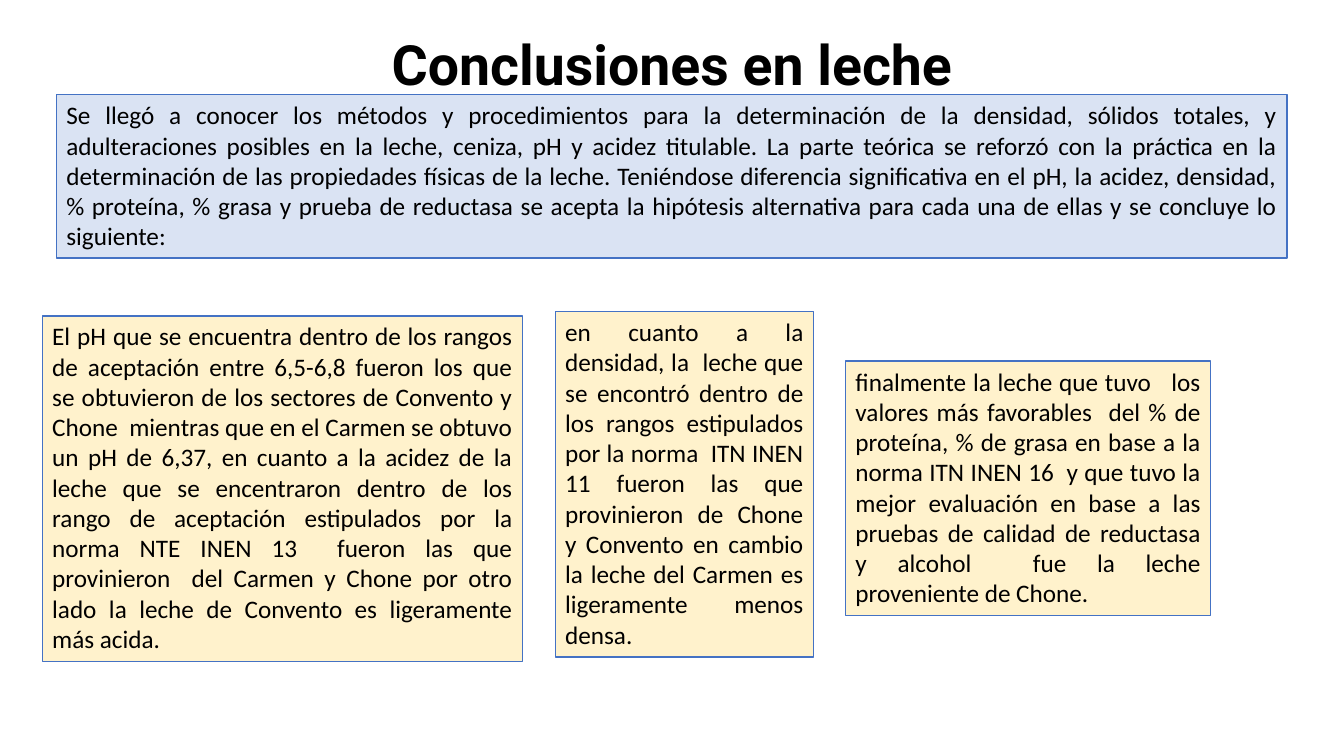
from pptx import Presentation
from pptx.dml import color
from pptx.enum import shapes, text
from pptx.util import Pt

INTRO = (
    "Se llegó a conocer los métodos y procedimientos para la determinación de la densidad, "
    "sólidos totales, y adulteraciones posibles en la leche, ceniza, pH y acidez titulable. "
    "La parte teórica se reforzó con la práctica en la determinación de las propiedades físicas "
    "de la leche. Teniéndose diferencia significativa en el pH, la acidez, densidad, % proteína, "
    "% grasa y prueba de reductasa se acepta la hipótesis alternativa para cada una de ellas y se "
    "concluye lo siguiente:"
)
ACIDITY = (
    "El pH que se encuentra dentro de los rangos de aceptación entre 6,5-6,8 fueron los que se "
    "obtuvieron de los sectores de Convento y Chone  mientras que en el Carmen se obtuvo un pH de "
    "6,37, en cuanto a la acidez de la leche que se encentraron dentro de los rango de aceptación "
    "estipulados por la norma NTE INEN 13  fueron las que provinieron  del Carmen y Chone por otro "
    "lado la leche de Convento es ligeramente más acida."
)
DENSITY = (
    "en cuanto a la densidad, la  leche que se encontró dentro de los rangos estipulados por la "
    "norma  ITN INEN 11 fueron las que provinieron de Chone y Convento en cambio la leche del "
    "Carmen es ligeramente menos densa."
)
QUALITY = (
    "finalmente la leche que tuvo   los valores más favorables  del % de proteína, % de grasa en "
    "base a la norma ITN INEN 16  y que tuvo la mejor evaluación en base a las pruebas de calidad "
    "de reductasa y alcohol  fue la leche proveniente de Chone."
)
FINDINGS = [
    (ACIDITY, (30.2, 225.6, 342.9, 246.9)),
    (DENSITY, (396.6, 222.5, 184.4, 246.9)),
    (QUALITY, (604, 257.8, 260.8, 181.7)),
]


def rgb(code):
    """Return the colour for a hex string."""
    return color.RGBColor.from_string(code)


def write(frame, wording, *, font="Calibri", size=18, bold=False, ink="000000",
          align=text.PP_ALIGN.JUSTIFY, anchor=text.MSO_ANCHOR.TOP, spacing=1.0):
    """Put one formatted paragraph into a text frame."""
    frame.word_wrap = True
    frame.auto_size = text.MSO_AUTO_SIZE.NONE
    frame.vertical_anchor = anchor
    paragraph = frame.paragraphs[0]
    paragraph.alignment = align
    paragraph.line_spacing = spacing
    run = paragraph.add_run()
    run.text = wording
    run.font.name = font
    run.font.size = Pt(size)
    run.font.bold = bold
    run.font.color.rgb = rgb(ink)


def add_heading(slide, wording, box):
    """Move the title placeholder to its box and fill it."""
    heading = slide.shapes.title
    heading.left, heading.top, heading.width, heading.height = map(Pt, box)
    write(heading.text_frame, wording, font="Roboto", size=39.6, bold=True,
          align=text.PP_ALIGN.CENTER, anchor=text.MSO_ANCHOR.MIDDLE, spacing=0.9)


def add_panel(slide, wording, box, fill):
    """Draw an outlined panel with justified wording."""
    panel = slide.shapes.add_shape(shapes.MSO_SHAPE.RECTANGLE, *map(Pt, box))
    panel.shadow.inherit = False
    panel.fill.solid()
    panel.fill.fore_color.rgb = rgb(fill)
    panel.line.color.rgb = rgb("4472C4")
    panel.line.width = Pt(1)
    write(panel.text_frame, wording)


def add_conclusions(deck):
    """Build the slide with the introduction and the findings."""
    slide = deck.slides.add_slide(deck.slide_layouts[5])
    add_heading(slide, "Conclusiones en leche", (66, 28.8, 828, 38.9))
    add_panel(slide, INTRO, (40.3, 67.7, 879.1, 116.6), "DAE3F3")
    for wording, box in FINDINGS:
        add_panel(slide, wording, box, "FFF2CC")


def main():
    """Create and save the deck."""
    deck = Presentation()
    deck.slide_width, deck.slide_height = Pt(960), Pt(540)
    add_conclusions(deck)
    deck.save("out.pptx")


if __name__ == "__main__":
    main()
